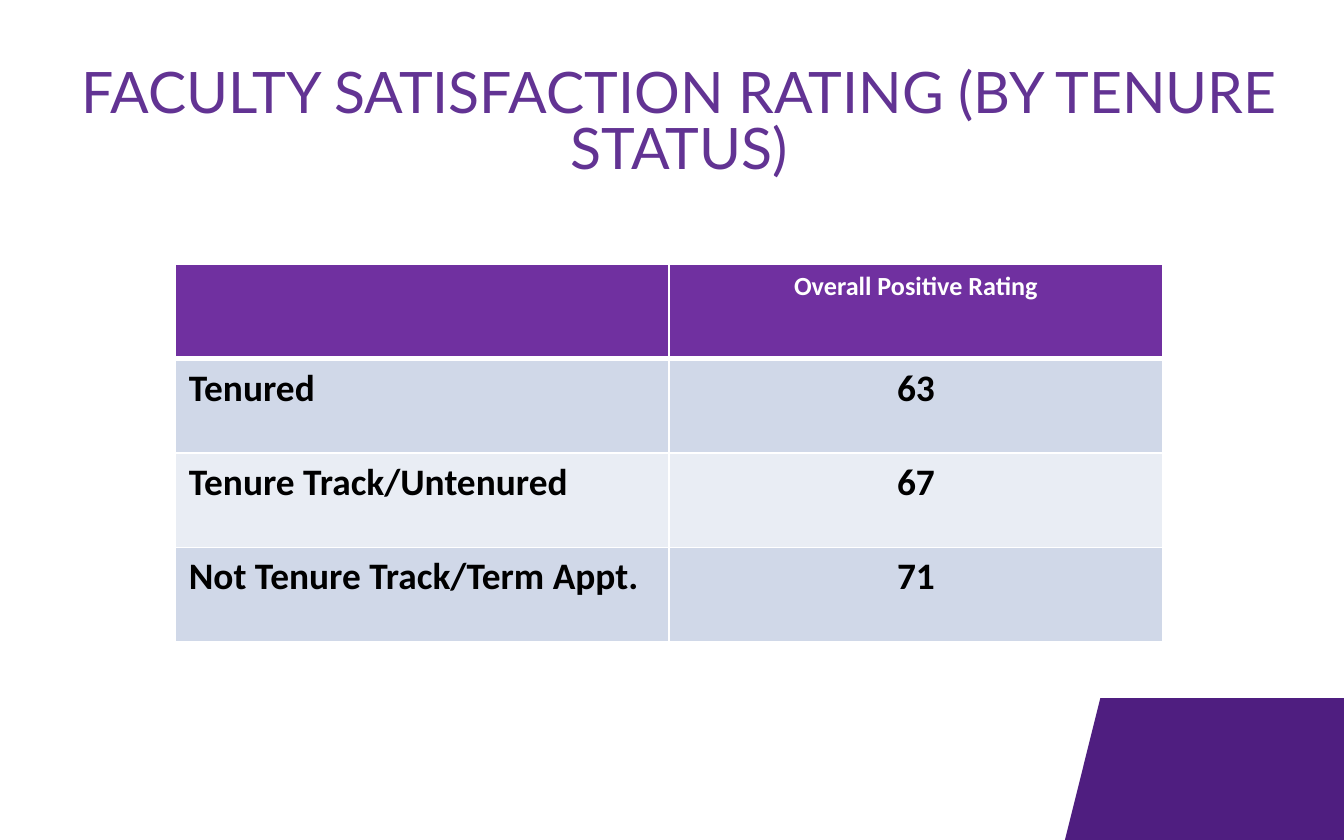
from lxml.etree import SubElement
from pptx import Presentation
from pptx.dml.color import RGBColor as RGB
from pptx.enum.text import MSO_ANCHOR as Anchor, PP_ALIGN as Align
from pptx.oxml.ns import qn
from pptx.util import Pt

COLORS = {
    "title": "623393",
    "corner": "4F1E80",
    "header": "7030A0",
    "band_dark": "D0D8E8",
    "band_light": "E9EDF4",
    "white": "FFFFFF",
    "black": "000000",
}
WIDTH, HEIGHT = 720, 450

RATINGS = [
    ("", "Overall Positive Rating"),
    ("Tenured", "63"),
    ("Tenure Track/Untenured", "67"),
    ("Not Tenure Track/Term Appt.", "71"),
]


def rgb(name):
    return RGB.from_string(COLORS[name])


class SlideBuilder:
    def __init__(self, slide, title_font="Lato", table_font="Calibri"):
        self.slide = slide
        self.title_font = title_font
        self.table_font = table_font

    def style(self, p, font, size, color, bold=False, align=Align.LEFT):
        p.alignment = align
        p.font.name, p.font.size, p.font.bold = font, Pt(size), bold
        p.font.color.rgb = rgb(color)

    def polygon(self, points, color):
        start, *rest = [(Pt(x), Pt(y)) for x, y in points]
        fb = self.slide.shapes.build_freeform(*start)
        fb.add_line_segments(rest, close=True)
        sp = fb.convert_to_shape()
        sp.shadow.inherit = False
        sp.fill.solid()
        sp.fill.fore_color.rgb = rgb(color)
        sp.line.fill.background()

    def title(self, text, x, y, w, h):
        """Centred heading, held above the middle by a deep bottom inset."""
        sp = self.slide.shapes.add_textbox(Pt(x), Pt(y), Pt(w), Pt(h))
        tf = sp.text_frame
        tf.word_wrap = True
        tf.vertical_anchor = Anchor.MIDDLE
        tf.margin_top, tf.margin_bottom = 0, Pt(30)
        p = tf.paragraphs[0]
        p.text = text
        p.line_spacing = Pt(30)
        self.style(p, self.title_font, 30.6, "title", align=Align.CENTER)

    def borders(self, cell, **widths):
        """White borders; must run before the fill, which follows them in the XML."""
        tc_pr = cell._tc.get_or_add_tcPr()
        for side, width in widths.items():
            ln = SubElement(tc_pr, qn(f"a:ln{side}"), w=str(Pt(width)))
            fill = SubElement(ln, qn("a:solidFill"))
            SubElement(fill, qn("a:srgbClr"), val=COLORS["white"])

    def table(self, rows, x, y, w, h):
        frame = self.slide.shapes.add_table(
            len(rows), len(rows[0]), Pt(x), Pt(y), Pt(w), Pt(h))
        for i, row in enumerate(rows):
            header = i == 0
            band = "band_dark" if i % 2 else "band_light"
            for j, text in enumerate(row):
                cell = frame.table.cell(i, j)
                self.borders(cell, L=1, R=1, T=3 if i == 1 else 1,
                             B=3 if header else 1)
                cell.fill.solid()
                cell.fill.fore_color.rgb = rgb("header" if header else band)
                p = cell.text_frame.paragraphs[0]
                p.text = text
                self.style(p, self.table_font, 14 if header else 20,
                           "white" if header else "black", bold=True,
                           align=Align.CENTER if j else Align.LEFT)


def main():
    prs = Presentation()
    prs.slide_width, prs.slide_height = Pt(WIDTH), Pt(HEIGHT)
    s = SlideBuilder(prs.slides.add_slide(prs.slide_layouts[6]))
    s.polygon([(589.5, 374), (WIDTH, 374), (WIDTH, HEIGHT), (570.5, HEIGHT)],
              "corner")
    s.title("FACULTY SATISFACTION RATING (BY TENURE STATUS)",
            29, 40.3, 669.6, 82.8)
    s.table(RATINGS, 94, 141.6, 529, 202.4)
    prs.save("out.pptx")


if __name__ == "__main__":
    main()
